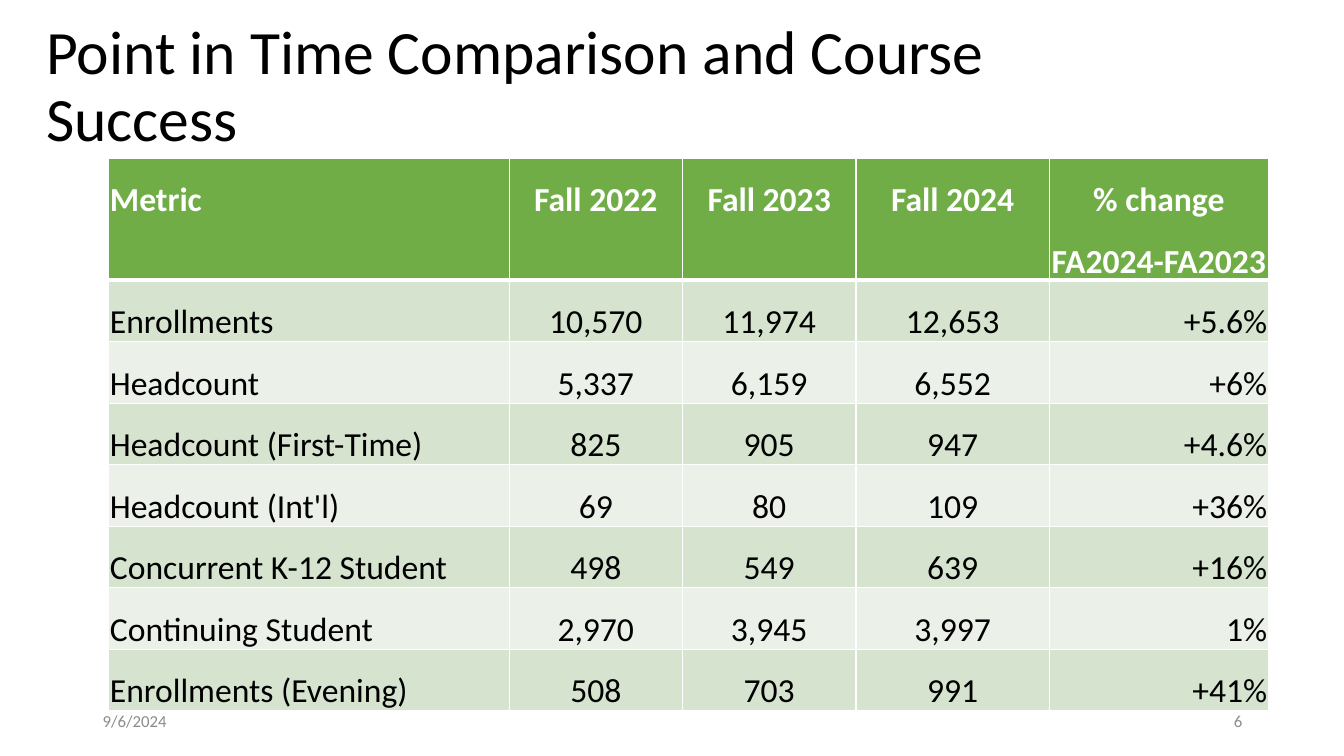
import pptx
import pptx.dml.color
import pptx.enum.text
import pptx.oxml
import pptx.oxml.ns
import pptx.util

Inches, Pt = pptx.util.Inches, pptx.util.Pt
ALIGN = pptx.enum.text.PP_ALIGN
ANCHOR = pptx.enum.text.MSO_ANCHOR

FONT = "Calibri"
COLORS = {
    "text": "000000",
    "footer": "8C8C8C",
    "white": "FFFFFF",
    "header": "70AD47",
    "odd": "D5E3CF",
    "even": "EBF1E9",
}
COL_WIDTHS = [3.97, 1.72, 1.72, 1.92, 2.17]
ROW_HEIGHTS = [0.7, 0.45, 0.53, 0.53, 0.48, 0.57, 0.58, 0.61]
COL_ALIGNS = [ALIGN.LEFT, ALIGN.CENTER, ALIGN.CENTER, ALIGN.CENTER, ALIGN.RIGHT]
ROWS = [
    ["Metric", "Fall 2022", "Fall 2023", "Fall 2024", "% change\nFA2024-FA2023"],
    ["Enrollments", "10,570", "11,974", "12,653", "+5.6%"],
    ["Headcount", "5,337", "6,159", "6,552", "+6%"],
    ["Headcount (First-Time)", "825", "905", "947", "+4.6%"],
    ["Headcount (Int'l)", "69", "80", "109", "+36%"],
    ["Concurrent K-12 Student", "498", "549", "639", "+16%"],
    ["Continuing Student", "2,970", "3,945", "3,997", "1%"],
    ["Enrollments (Evening)", "508", "703", "991", "+41%"],
]


def rgb(name):
    return pptx.dml.color.RGBColor.from_string(COLORS[name])


def format_paragraph(p, size, color, align, spacing, bold=False):
    p.alignment = align
    p.line_spacing = spacing
    p.font.name = FONT
    p.font.size = Pt(size)
    p.font.bold = bold
    p.font.color.rgb = rgb(color)


def add_text(slide, box, text, size, color, align=ALIGN.LEFT, spacing=1.0):
    sp = slide.shapes.add_textbox(*map(Inches, box))
    tf = sp.text_frame
    tf.word_wrap = True
    tf.vertical_anchor = ANCHOR.MIDDLE
    tf.text = text
    format_paragraph(tf.paragraphs[0], size, color, align, spacing)


def set_borders(cell, bottom):
    tc_pr = cell._tc.get_or_add_tcPr()
    # Borders come before the fill in the cell properties
    widths = {"lnL": 1, "lnR": 1, "lnT": 1, "lnB": bottom}
    for i, (tag, width) in enumerate(widths.items()):
        tc_pr.insert(i, pptx.oxml.parse_xml(
            f'<a:{tag} {pptx.oxml.ns.nsdecls("a")} w="{Pt(width)}"><a:solidFill>'
            f'<a:srgbClr val="{COLORS["white"]}"/></a:solidFill></a:{tag}>'))


def fill_cell(cell, text, fill, color, align, bold, bottom):
    cell.margin_left = cell.margin_right = cell.margin_top = Inches(0.01)
    cell.margin_bottom = 0
    cell.fill.solid()
    cell.fill.fore_color.rgb = rgb(fill)
    cell.text = text
    for p in cell.text_frame.paragraphs:
        format_paragraph(p, 24, color, align, 1.5, bold)
    set_borders(cell, bottom)


def add_metrics_table(slide, left, top):
    table = slide.shapes.add_table(
        len(ROWS), len(COL_WIDTHS), Inches(left), Inches(top),
        Inches(sum(COL_WIDTHS)), Inches(sum(ROW_HEIGHTS))).table
    for column, width in zip(table.columns, COL_WIDTHS):
        column.width = Inches(width)
    for r, values in enumerate(ROWS):
        table.rows[r].height = Inches(ROW_HEIGHTS[r])
        header = r == 0
        fill = "header" if header else "odd" if r % 2 else "even"
        for c, text in enumerate(values):
            align = ALIGN.CENTER if header and c else COL_ALIGNS[c]
            fill_cell(table.cell(r, c), text, fill, "white" if header else "text",
                      align, header, 3 if header else 1)


def main():
    prs = pptx.Presentation()
    prs.slide_width, prs.slide_height = Inches(13.33), Inches(7.5)
    slide = prs.slides.add_slide(prs.slide_layouts[6])

    # Title
    add_text(slide, (0.36, 0.15, 11.5, 1.45),
             "Point in Time Comparison and Course Success", 44, "text", spacing=0.9)

    # Footer: date and slide number
    add_text(slide, (0.92, 6.95, 3, 0.4), "9/6/2024", 12, "footer")
    add_text(slide, (9.42, 6.95, 3, 0.4), "6", 12, "footer", ALIGN.RIGHT)

    # Metrics by term
    add_metrics_table(slide, 1.08, 1.57)

    prs.save("out.pptx")


if __name__ == "__main__":
    main()
